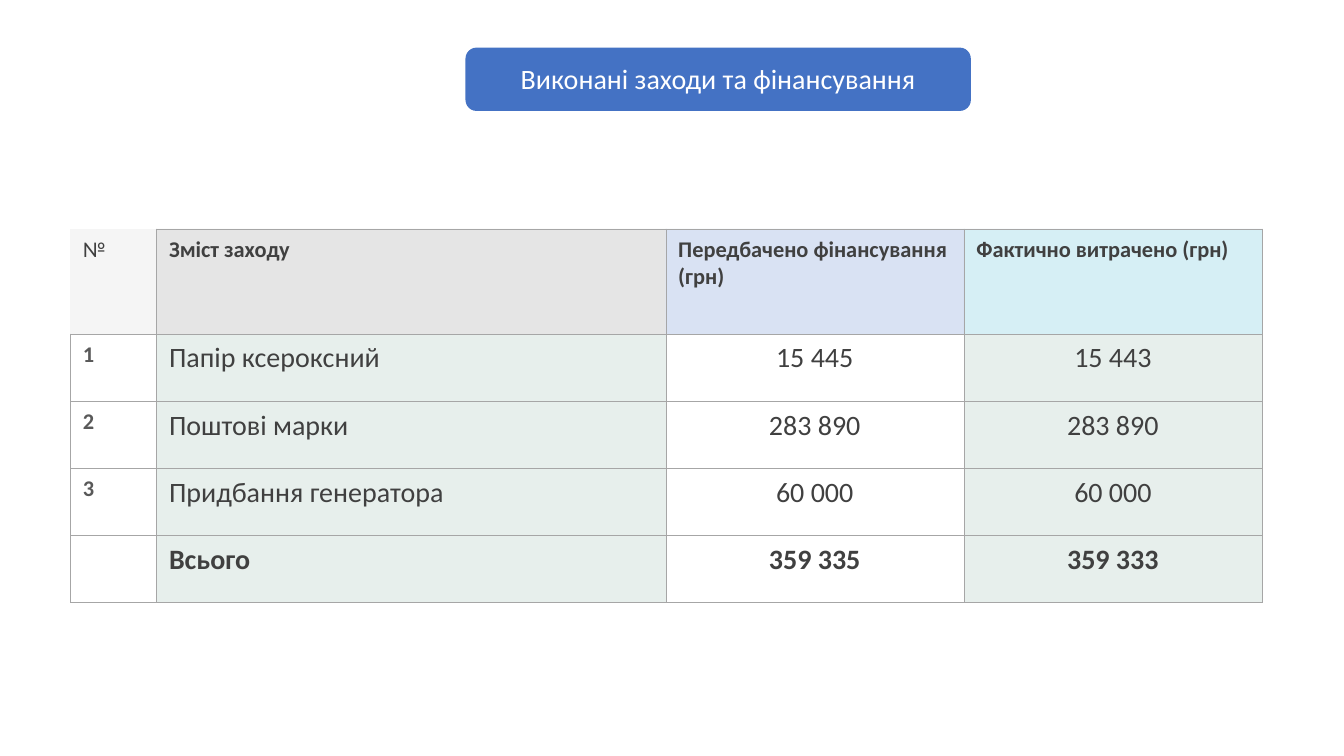
import pptx
import pptx.util
import pptx.dml.color
import pptx.enum.shapes
import pptx.enum.text
import pptx.oxml.ns
from lxml import etree

PX = 9525
FONT = "Calibri"
ALIGN = pptx.enum.text.PP_ALIGN
COLS = [82, 485, 284, 284]
ROWS = [100, 64, 64, 64, 64]
HEADER_FILLS = [("F5F5F5", 100), ("808080", 20), ("4472C4", 20), ("36AFCE", 20)]
BODY_FILLS = [None, ("E7EFEC", 100), None, ("E7EFEC", 100)]
DATA = [
    ["№", "Зміст заходу", "Передбачено фінансування (грн)", "Фактично витрачено (грн)"],
    ["1", "Папір ксероксний", "15 445", "15 443"],
    ["2", "Поштові марки", "283 890", "283 890"],
    ["3", "Придбання генератора", "60 000", "60 000"],
    ["", "Всього", "359 335", "359 333"],
]


def px(*values):
    return [pptx.util.Emu(v * PX) for v in values]


def color(value):
    return pptx.dml.color.RGBColor.from_string(value)


def sub(parent, tag, **attrs):
    return etree.SubElement(parent, pptx.oxml.ns.qn(tag), attrs)


def write(tf, text, size, hex_color, bold=False, align=ALIGN.LEFT):
    p = tf.paragraphs[0]
    p.alignment = align
    r = p.add_run()
    r.text = text
    formats = {"name": FONT, "size": pptx.util.Pt(size), "bold": bold}
    for key, value in formats.items():
        setattr(r.font, key, value)
    r.font.color.rgb = color(hex_color)


def fill_cell(cell, fill):
    if fill is None:
        cell.fill.background()
        return
    hex_color, opacity = fill
    cell.fill.solid()
    cell.fill.fore_color.rgb = color(hex_color)
    if opacity < 100:
        tc_pr = cell._tc.get_or_add_tcPr()
        clr = tc_pr.find(".//" + pptx.oxml.ns.qn("a:srgbClr"))
        sub(clr, "a:alpha", val=str(opacity * 1000))


def border_cell(cell, hidden):
    tc_pr = cell._tc.get_or_add_tcPr()
    for i, side in enumerate("LRTB"):
        ln = sub(tc_pr, f"a:ln{side}", w="3175")
        if side in hidden:
            sub(ln, "a:noFill")
        else:
            sub(sub(ln, "a:solidFill"), "a:srgbClr", val="A6A6A6")
        tc_pr.insert(i, ln)


def add_title(s, x, y, w, h):
    sp = s.shapes.add_shape(pptx.enum.shapes.MSO_SHAPE.ROUNDED_RECTANGLE, *px(x, y, w, h))
    sp.shadow.inherit = False
    sp.fill.solid()
    sp.fill.fore_color.rgb = color("4472C4")
    sp.line.color.rgb = color("4472C4")
    sp.line.width = pptx.util.Pt(1)
    text_w, text_h = 400, 42
    box = px(x + (w - text_w) // 2, y + (h - text_h) // 2, text_w, text_h)
    tf = s.shapes.add_textbox(*box).text_frame
    tf.word_wrap = False
    tf.auto_size = pptx.enum.text.MSO_AUTO_SIZE.SHAPE_TO_FIT_TEXT
    write(tf, "Виконані заходи та фінансування", 20, "FFFFFF", align=ALIGN.CENTER)


def add_costs(s, x, y):
    box = px(x, y, sum(COLS), sum(ROWS))
    table = s.shapes.add_table(len(ROWS), len(COLS), *box).table
    table.first_row = table.horz_banding = False
    for column, width in zip(table.columns, px(*COLS)):
        column.width = width
    for row, height in zip(table.rows, px(*ROWS)):
        row.height = height
    margin_x, margin_y = px(12, 7)
    margins = {"margin_left": margin_x, "margin_right": margin_x,
               "margin_top": margin_y, "margin_bottom": margin_y}
    for i, texts in enumerate(DATA):
        header, total = i == 0, i == len(DATA) - 1
        for j, text in enumerate(texts):
            cell = table.cell(i, j)
            for key, value in margins.items():
                setattr(cell, key, value)
            fill_cell(cell, (HEADER_FILLS if header else BODY_FILLS)[j])
            border_cell(cell, "LT" if header and j == 0 else "")
            if text:
                number = j == 0 and not header
                write(cell.text_frame, text,
                      16 if header or number else 20,
                      "595959" if number else "404040",
                      bold=total or number or (header and j > 0),
                      align=ALIGN.CENTER if j > 1 and not header else ALIGN.LEFT)


def main():
    prs = pptx.Presentation()
    prs.slide_width, prs.slide_height = px(1280, 720)
    s = prs.slides.add_slide(prs.slide_layouts[6])
    add_title(s, 444, 46, 480, 59)
    add_costs(s, 67, 218)
    prs.save("out.pptx")


if __name__ == "__main__":
    main()
